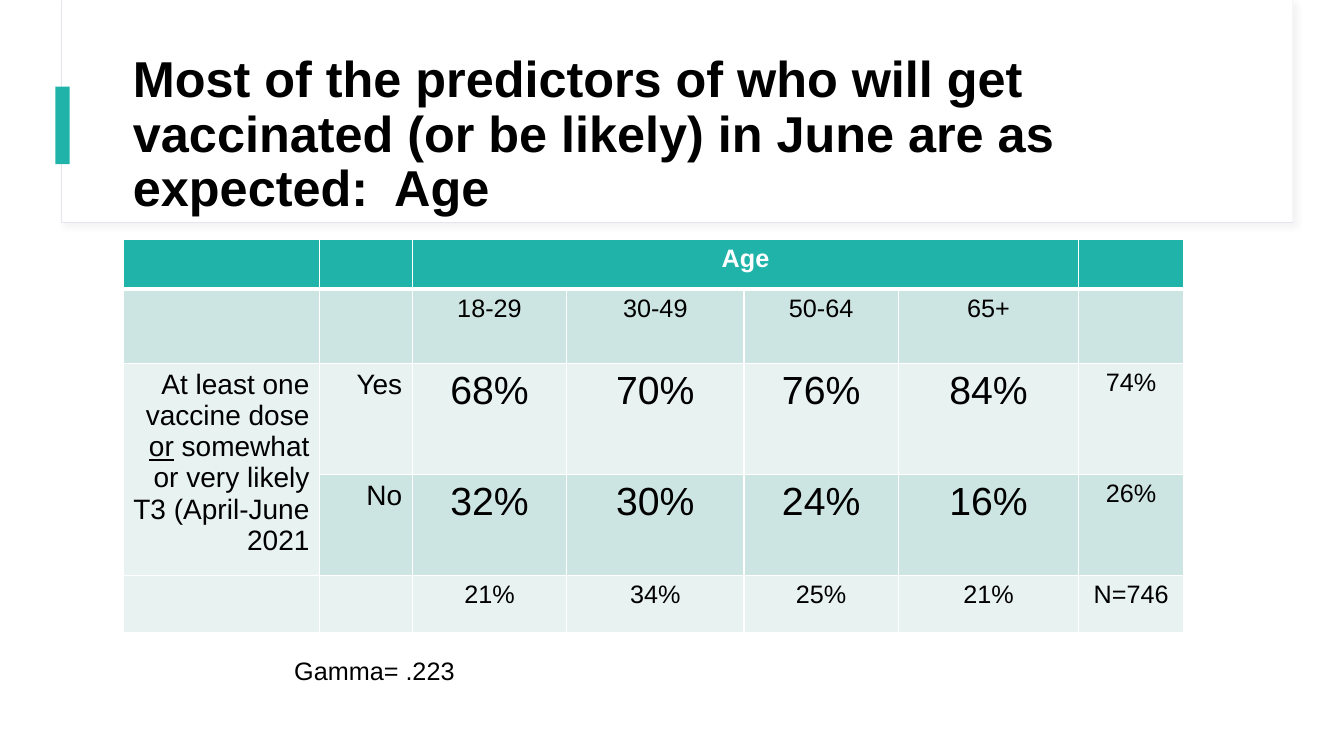
from lxml import etree
from pptx import Presentation
from pptx.dml.color import RGBColor
from pptx.enum.shapes import MSO_SHAPE
from pptx.enum.text import MSO_ANCHOR, MSO_AUTO_SIZE, PP_ALIGN
from pptx.oxml import parse_xml
from pptx.oxml.ns import nsdecls, qn
from pptx.util import Emu, Pt

RECTANGLE = MSO_SHAPE.RECTANGLE
MIDDLE = MSO_ANCHOR.MIDDLE
FIT_SHAPE = MSO_AUTO_SIZE.SHAPE_TO_FIT_TEXT
CENTER, RIGHT = PP_ALIGN.CENTER, PP_ALIGN.RIGHT

EMU_PER_PX = 9144  # 100 px to the inch
FONT = "Arial"
COLORS = {
    "white": "FFFFFF",
    "black": "000000",
    "teal": "20B3AA",
    "band_dark": "CDE5E2",
    "band_light": "E8F2F1",
    "frame": "E3E6EF",
    "shadow": "D9D9D9",
}

TITLE = ("Most of the predictors of who will get vaccinated (or be likely) "
         "in June are as expected:  Age")
OUTCOME = [("At least one vaccine dose ", False), ("or", True),
           (" somewhat or very likely T3 (April-June 2021", False)]
COLUMN_WIDTHS = [195, 92, 153, 176, 153, 179, 104]
ROW_HEIGHTS = [49, 74, 110, 86, 57]
ROW_FILLS = ["teal", "band_dark", "band_light", "band_dark", "band_light"]
ROWS = [
    ["", "", "Age", "", "", "", ""],
    ["", "", "18-29", "30-49", "50-64", "65+", ""],
    [OUTCOME, "Yes", "68%", "70%", "76%", "84%", "74%"],
    ["", "No", "32%", "30%", "24%", "16%", "26%"],
    ["", "", "21%", "34%", "25%", "21%", "N=746"],
]
LABEL_COLUMNS = range(0, 2)
AGE_COLUMNS = range(2, 6)
SHARE_ROWS = range(2, 4)


def px(length):
    return Emu(length * EMU_PER_PX)


def rgb(name):
    return RGBColor.from_string(COLORS[name])


def set_font(para, size, color="black", bold=False):
    font = para.font
    font.name, font.size, font.bold = FONT, Pt(size), bold
    font.color.rgb = rgb(color)


def add_box(page, left, top, width, height, fill, line=None):
    box = page.shapes.add_shape(RECTANGLE, px(left), px(top), px(width), px(height))
    box.shadow.inherit = False
    box.fill.solid()
    box.fill.fore_color.rgb = rgb(fill)
    if line:
        box.line.color.rgb = rgb(line)
        box.line.width = Pt(0.75)
    else:
        box.line.fill.background()
    return box


def add_soft_shadow(box):
    effects = box._element.spPr.find(qn("a:effectLst"))
    shadow = etree.SubElement(effects, qn("a:outerShdw"), blurRad=str(Pt(4)),
                              dist=str(Pt(3)), dir="2700000", algn="tl")
    color = etree.SubElement(shadow, qn("a:srgbClr"), val=COLORS["shadow"])
    etree.SubElement(color, qn("a:alpha"), val="30000")


def add_text(page, left, top, width, height, text, size, bold=False, wrap=True):
    box = page.shapes.add_textbox(px(left), px(top), px(width), px(height))
    frame = box.text_frame
    frame.word_wrap = wrap
    para = frame.paragraphs[0]
    para.text = text
    set_font(para, size, bold=bold)
    return frame


def set_borders(cell, bottom_width):
    """Draw white cell borders, 1 pt wide except at the bottom."""
    properties = cell._tc.get_or_add_tcPr()
    widths = {"lnL": 1, "lnR": 1, "lnT": 1, "lnB": bottom_width}
    for index, (side, width) in enumerate(widths.items()):
        properties.insert(index, parse_xml(
            f'<a:{side} {nsdecls("a")} w="{Pt(width)}"><a:solidFill>'
            f'<a:srgbClr val="{COLORS["white"]}"/></a:solidFill></a:{side}>'))


def fill_cell(cell, content, row, column):
    cell.fill.solid()
    cell.fill.fore_color.rgb = rgb(ROW_FILLS[row])
    is_header = row == 0
    set_borders(cell, 3 if is_header else 1)
    if not content:
        return
    para = cell.text_frame.paragraphs[0]
    spans = [(content, False)] if isinstance(content, str) else content
    for text, underlined in spans:
        span = para.add_run()
        span.text = text
        if underlined:
            span.font.underline = True
    is_label = column in LABEL_COLUMNS
    is_share = row in SHARE_ROWS and column in AGE_COLUMNS
    para.alignment = RIGHT if is_label else CENTER
    size = 20 if is_label else 28 if is_share else 18
    set_font(para, size, "white" if is_header else "black", is_header)


def add_age_table(page, left, top):
    table = page.shapes.add_table(
        len(ROW_HEIGHTS), len(COLUMN_WIDTHS), px(left), px(top),
        px(sum(COLUMN_WIDTHS)), px(sum(ROW_HEIGHTS))).table
    for column, width in zip(table.columns, COLUMN_WIDTHS):
        column.width = px(width)
    for row, height in zip(table.rows, ROW_HEIGHTS):
        row.height = px(height)
    for row, contents in enumerate(ROWS):
        for column, content in enumerate(contents):
            fill_cell(table.cell(row, column), content, row, column)
    table.cell(0, AGE_COLUMNS[0]).merge(table.cell(0, AGE_COLUMNS[-1]))
    table.cell(SHARE_ROWS[0], 0).merge(table.cell(SHARE_ROWS[-1], 0))


def main():
    deck = Presentation()
    deck.slide_width, deck.slide_height = px(1333), px(750)
    page = deck.slides.add_slide(deck.slide_layouts[6])

    title_frame = add_box(page, 61, 0, 1221, 221, "white", line="frame")
    add_soft_shadow(title_frame)
    add_box(page, 62, 0, 1220, 220, "white")
    add_box(page, 55, 86, 14, 77, "teal")

    title = add_text(page, 122, 60, 1112, 150, TITLE, 36, bold=True)
    title.vertical_anchor = MIDDLE
    title.paragraphs[0].line_spacing = 0.9

    add_age_table(page, 122, 238)
    gamma = add_text(page, 282, 645, 184, 40, "Gamma= .223", 18, wrap=False)
    gamma.auto_size = FIT_SHAPE
    deck.save("out.pptx")


if __name__ == "__main__":
    main()
